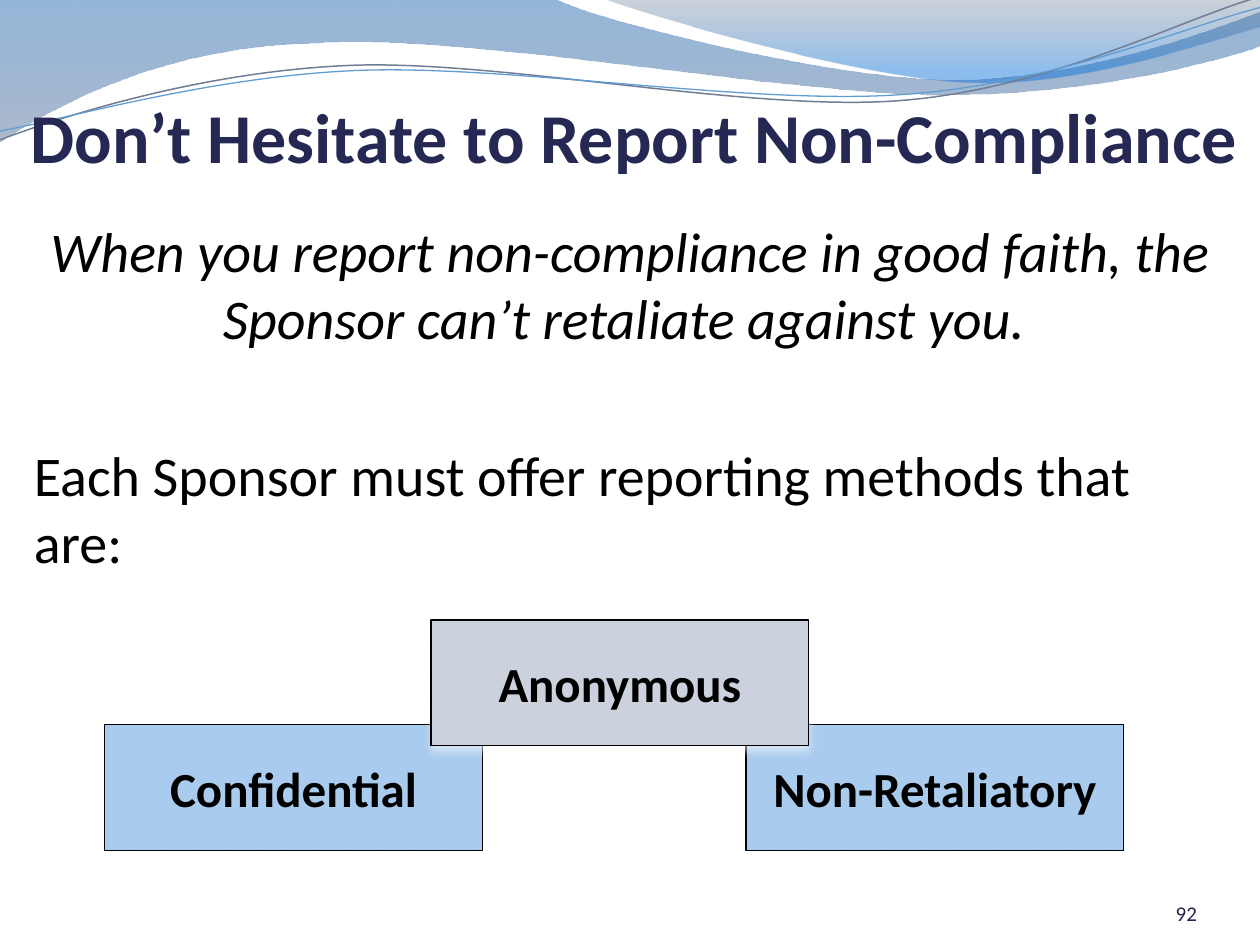
from lxml import etree
from pptx import Presentation
from pptx.dml.color import RGBColor
from pptx.enum.shapes import MSO_SHAPE as Shape
from pptx.enum.text import MSO_ANCHOR as Anchor, PP_ALIGN as Align
from pptx.oxml.ns import qn
from pptx.util import Inches, Pt

TITLE = "Don’t Hesitate to Report Non-Compliance"
PROMISE = "When you report non-compliance in good faith, the Sponsor can’t retaliate against you. "
LEAD_IN = "Each Sponsor must offer reporting methods that are:"
PAGE = "92"

METHODS = [
    ("Confidential", 0.83, 5.75, "A9CCEE"),
    ("Non-Retaliatory", 5.92, 5.75, "A9CCEE"),
    ("Anonymous", 3.42, 4.92, "CCD2DD"),
]

# Each step holds one end point, or two control points and an end point.
BANDS = [
    ([[(0, 0)], [(4.4, -0.01)],
      [(4.76, 0.17), (6.64, 0.63), (7.58, 0.63)],
      [(8.53, 0.63), (9.58, 0.26), (10, 0.09)],
      [(10.01, 0.36)],
      [(9.83, 0.44), (8.7, 0.76), (7.46, 0.75)],
      [(6.22, 0.75), (3.82, 0.28), (2.57, 0.34)],
      [(1.29, 0.36), (0.46, 0.83), (-0.01, 1.13)],
      [(0, 0)]],
     [(0, "125EAA", 45), (1, "697FA4", 55)]),
    ([[(4.79, -0.01)],
      [(5.09, 0.11), (6.82, 0.62), (7.69, 0.65)],
      [(8.56, 0.69), (9.61, 0.32), (10, 0.21)],
      [(10, 0)], [(4.79, -0.01)]],
     [(0, "596982", 30), (0.8, "0670DA", 45)]),
]
WAVES = [
    ([[(0, 1.11)],
      [(0.48, 0.93), (1.58, 0.57), (2.77, 0.52)],
      [(3.95, 0.47), (5.93, 0.89), (7.13, 0.8)],
      [(8.33, 0.71), (9.38, 0.15), (9.98, -0.02)]], "707E95", 0.85),
    ([[(0, 1.04)],
      [(0.47, 0.96), (1.64, 0.61), (2.83, 0.56)],
      [(4.03, 0.51), (5.97, 0.84), (7.17, 0.75)],
      [(8.36, 0.67), (9.41, 0.21), (10, 0.06)]], "629DD1", 0.75),
]
UNITS_PER_INCH = 100


def rgb(value):
    return RGBColor.from_string(value)


def add_outline(slide, steps, close):
    start, *rest = [(round(x * UNITS_PER_INCH), round(y * UNITS_PER_INCH))
                    for step in steps for x, y in step]
    builder = slide.shapes.build_freeform(*start, scale=Inches(1) / UNITS_PER_INCH)
    builder.add_line_segments(rest, close=close)
    outline = builder.convert_to_shape()
    outline.shadow.inherit = False

    segments = iter(list(outline._element.spPr.iter(qn("a:lnTo"))))
    for step in steps[1:]:
        parts = [next(segments) for _ in step]
        if len(parts) == 3:
            curve = etree.Element(qn("a:cubicBezTo"))
            parts[0].addprevious(curve)
            for part in parts:
                curve.append(part[0])
                part.getparent().remove(part)
    return outline


def add_alpha(color, percent):
    etree.SubElement(color, qn("a:alpha"), val=str(percent * 1000))


def add_band(slide, steps, stops):
    band = add_outline(slide, steps, True)
    band.line.fill.background()
    band.fill.gradient()
    band.fill.gradient_angle = 270
    for stop, (position, color, _) in zip(band.fill.gradient_stops, stops):
        stop.position = position
        stop.color.rgb = rgb(color)
    for color, (_, _, alpha) in zip(band._element.spPr.iter(qn("a:srgbClr")), stops):
        add_alpha(color, alpha)


def add_wave(slide, steps, color, width):
    wave = add_outline(slide, steps, False)
    wave.fill.background()
    wave.line.color.rgb = rgb(color)
    wave.line.width = Pt(width)


def write(paragraph, text, size, color="000000", align=Align.LEFT, bold=False, italic=False):
    paragraph.text = text
    paragraph.alignment = align
    font = paragraph.font
    font.name, font.size, font.bold, font.italic = "Calibri", Pt(size), bold, italic
    font.color.rgb = rgb(color)


def add_frame(slide, box, anchor, margins=(0.1, 0.05, 0.1, 0.05)):
    area = slide.shapes.add_textbox(*map(Inches, box))
    frame = area.text_frame
    frame.word_wrap = True
    frame.vertical_anchor = anchor
    (frame.margin_left, frame.margin_top,
     frame.margin_right, frame.margin_bottom) = map(Inches, margins)
    return area, frame


def add_method(slide, label, left, top, fill):
    method = slide.shapes.add_shape(Shape.RECTANGLE, Inches(left), Inches(top),
                                    Inches(3), Inches(1))
    method.fill.solid()
    method.fill.fore_color.rgb = rgb(fill)
    method.line.color.rgb = rgb("000000")
    method.line.width = Pt(0.75)
    method.shadow.inherit = False
    effects = method._element.spPr.find(qn("a:effectLst"))
    glow = etree.SubElement(effects, qn("a:outerShdw"), blurRad=str(Pt(4.5)),
                            dist=str(Pt(3)), dir="5400000", rotWithShape="0")
    add_alpha(etree.SubElement(glow, qn("a:srgbClr"), val="FFFFFF"), 48)
    method.text_frame.vertical_anchor = Anchor.MIDDLE
    write(method.text_frame.paragraphs[0], label, 28, align=Align.CENTER, bold=True)


def main():
    deck = Presentation()
    deck.slide_width, deck.slide_height = Inches(10), Inches(7.5)
    slide = deck.slides.add_slide(deck.slide_layouts[6])

    for band in BANDS:
        add_band(slide, *band)
    for wave in WAVES:
        add_wave(slide, *wave)

    _, title = add_frame(slide, (0.03, 0.33, 10, 1.38), Anchor.BOTTOM, (0, 0.05, 0, 0.3))
    write(title.paragraphs[0], TITLE, 40, "242852", Align.CENTER, bold=True)

    body_area, body = add_frame(slide, (0.17, 1.67, 9.67, 3.25), Anchor.TOP)
    body_area.fill.solid()
    body_area.fill.fore_color.rgb = rgb("FFFFFF")
    write(body.paragraphs[0], PROMISE, 32, align=Align.CENTER, italic=True)
    lead_in = body.add_paragraph()
    write(lead_in, LEAD_IN, 32)
    lead_in.space_before = Pt(51)

    _, page = add_frame(slide, (8.67, 6.95, 0.83, 0.4), Anchor.BOTTOM, (0, 0, 0, 0))
    write(page.paragraphs[0], PAGE, 12, "22264E", Align.RIGHT)

    for method in METHODS:
        add_method(slide, *method)

    deck.save("out.pptx")


if __name__ == "__main__":
    main()
